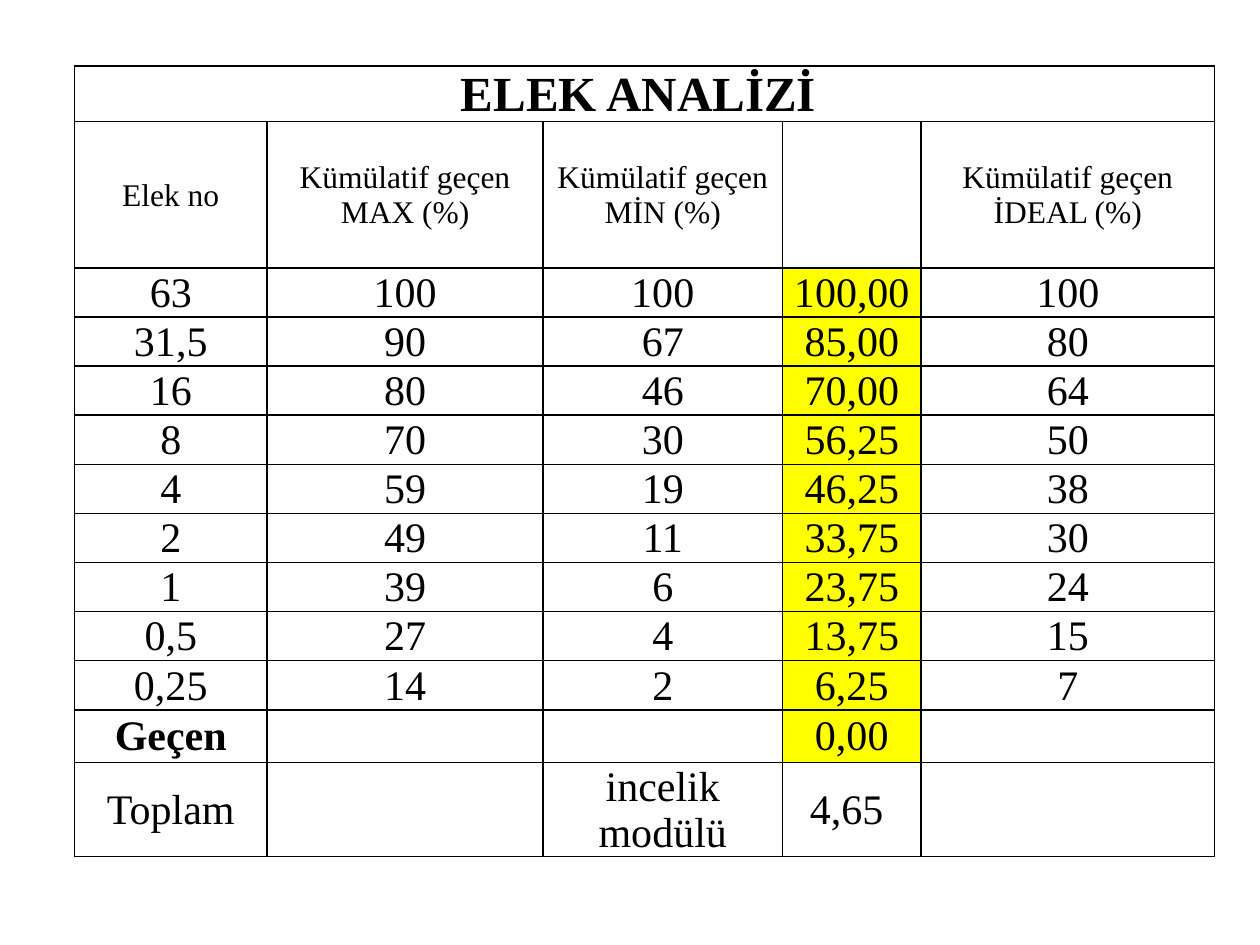
from dataclasses import dataclass
from typing import Any

from lxml.etree import SubElement
from pptx import Presentation
from pptx.dml.color import RGBColor
from pptx.enum.text import MSO_ANCHOR as Anchor, PP_ALIGN as Align
from pptx.oxml.ns import qn
from pptx.util import Inches, Pt

WIDTH, HEIGHT = 10, 7.5
TITLE = "ELEK ANALİZİ "
HEADINGS = ["Elek no", "Kümülatif geçen MAX (%)", "Kümülatif geçen MİN (%)", "",
            "Kümülatif geçen İDEAL (%)"]
SIEVES = [
    ["63", "100", "100", "100,00", "100"],
    ["31,5", "90", "67", "85,00", "80"],
    ["16", "80", "46", "70,00", "64"],
    ["8", "70", "30", "56,25", "50"],
    ["4", "59", "19", "46,25", "38"],
    ["2", "49", "11", "33,75", "30"],
    ["1", "39", "6", "23,75", "24"],
    ["0,5", "27", "4", "13,75", "15"],
    ["0,25", "14", "2", "6,25", "7"],
    ["Geçen", "", "", "0,00", ""],
]
TOTALS = ["Toplam", "", "incelik modülü", "4,65 ", ""]
COLUMNS = [1.53, 2.19, 1.9, 1.1, 2.33]
ROWS = [0.41, 1.16] + [0.39] * (len(SIEVES) + 1)
MIXED_COLUMN = 3


def color(code):
    """Turn a hex string into a colour."""
    return RGBColor.from_string(code)


@dataclass
class SlideWriter:
    """Hold the style and the page being written."""
    page: Any
    font: str = "Times New Roman"
    ink: str = "000000"
    mark: str = "FFFF00"
    line: float = 1

    def table(self, left, top, columns, rows):
        """Add a plain table placed by shares of the slide's size."""
        frame = self.page.shapes.add_table(
            len(rows), len(columns), Inches(left * WIDTH), Inches(top * HEIGHT),
            Inches(sum(columns)), Inches(sum(rows)))
        grid = frame.table
        grid.first_row = grid.horz_banding = False
        for column, width in zip(grid.columns, columns):
            column.width = Inches(width)
        for row, height in zip(grid.rows, rows):
            row.height = Inches(height)
        return grid

    def cell(self, box, text, size, bold=False, marked=False):
        """Write one centred cell with its borders and fill."""
        box.vertical_anchor = Anchor.MIDDLE
        box.margin_left = box.margin_right = box.margin_top = Inches(0.01)
        box.margin_bottom = 0
        para = box.text_frame.paragraphs[0]
        para.alignment = Align.CENTER
        para.font.size = Pt(size)
        if text:
            span = para.add_run()
            span.text = text
            span.font.name = self.font
            span.font.size = Pt(size)
            span.font.bold = bold
            span.font.color.rgb = color(self.ink)
        self.borders(box)
        if marked:
            box.fill.solid()
            box.fill.fore_color.rgb = color(self.mark)
        else:
            box.fill.background()

    def borders(self, box):
        """Draw a solid line on all four sides of a cell."""
        properties = box._tc.get_or_add_tcPr()
        for side in ("a:lnL", "a:lnR", "a:lnT", "a:lnB"):
            edge = SubElement(properties, qn(side), w=str(Pt(self.line)))
            fill = SubElement(edge, qn("a:solidFill"))
            SubElement(fill, qn("a:srgbClr"), val=self.ink)


def main():
    """Build the sieve analysis slide."""
    deck = Presentation()
    deck.slide_width, deck.slide_height = Inches(WIDTH), Inches(HEIGHT)
    writer = SlideWriter(deck.slides.add_slide(deck.slide_layouts[6]))
    grid = writer.table(0.059, 0.07, COLUMNS, ROWS)
    grid.cell(0, 0).merge(grid.cell(0, len(COLUMNS) - 1))
    title_row = [TITLE] + [""] * (len(COLUMNS) - 1)
    for y, texts in enumerate([title_row, HEADINGS, *SIEVES, TOTALS]):
        size = {0: 28, 1: 18}.get(y, 24)
        for x, text in enumerate(texts):
            writer.cell(grid.cell(y, x), text, size,
                        bold=text in (TITLE, "Geçen"),
                        marked=x == MIXED_COLUMN and texts in SIEVES)
    deck.save("out.pptx")


if __name__ == "__main__":
    main()
